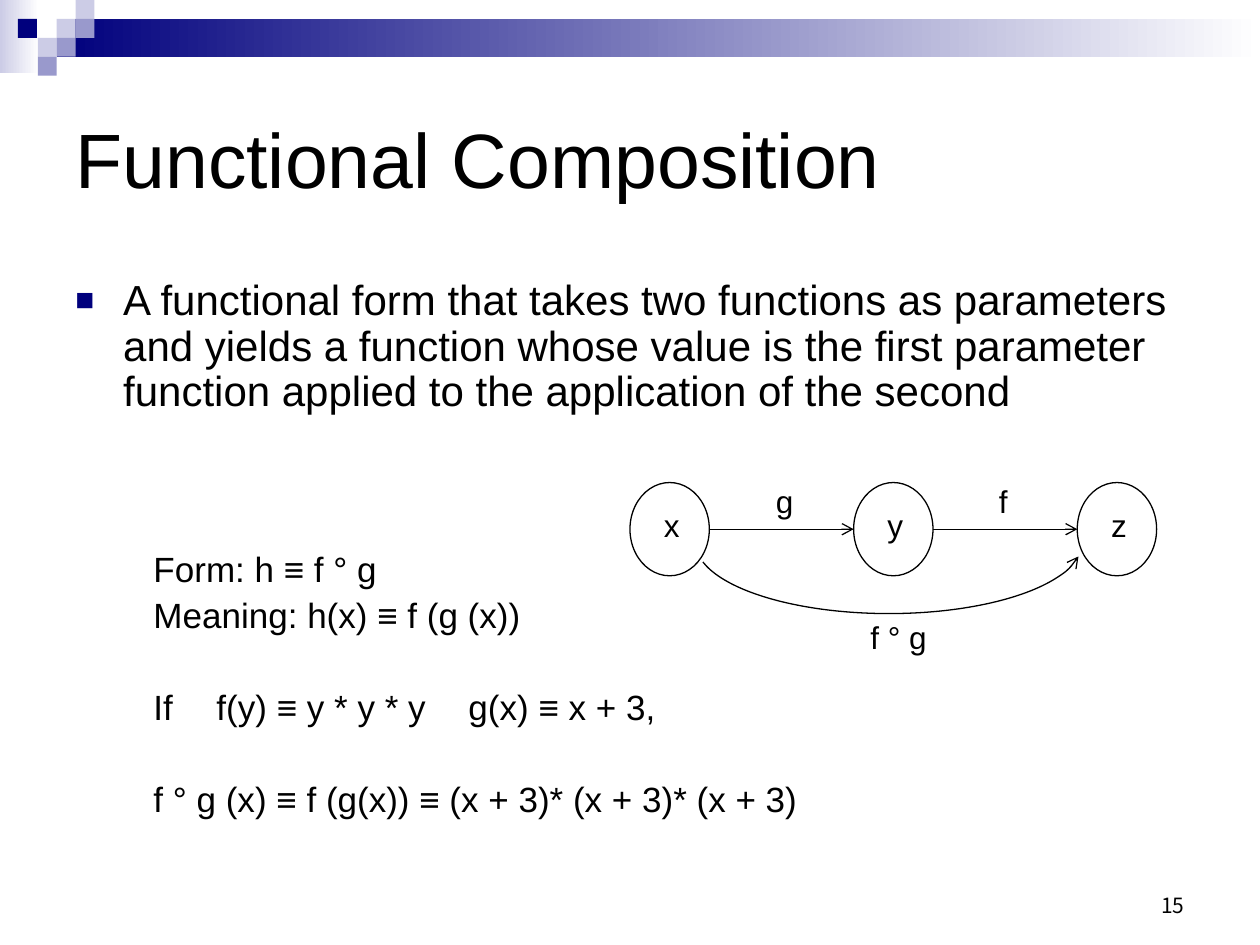
"""Build the Functional Composition slide."""
from lxml.etree import SubElement
from pptx import Presentation
from pptx.dml.color import RGBColor
from pptx.enum.shapes import MSO_CONNECTOR, MSO_SHAPE
from pptx.enum.text import MSO_ANCHOR, PP_ALIGN
from pptx.oxml.ns import qn
from pptx.util import Inches, Pt

TITLE = "Functional Composition"
POINT = ("A functional form that takes two functions as parameters and yields "
         "a function whose value is the first parameter function applied to "
         "the application of the second")
LINES = [
    ("Form: h ≡ f ° g", 78),
    ("Meaning: h(x) ≡ f (g (x))", 5),
    ("If\tf(y) ≡ y * y * y\tg(x) ≡ x + 3,", 30.7),
    ("f ° g (x) ≡ f (g(x)) ≡ (x + 3)* (x + 3)* (x + 3)", 30.7),
]
TABS = [1.24, 3.58]
NODES = ["x", "y", "z"]
LABELS = [("g", 6.06, 3.78, 0.34), ("f", 7.83, 3.78, 0.27),
          ("f ° g", 6.81, 4.86, 0.72)]
NAVY, MID, PALE, WHITE, BLACK = "00007D", "9999CC", "CCCCE6", "FFFFFF", "000000"
BARS = [((0, 0, 0.31, 0.58), PALE), ((0.45, 0.15, 9.55, 0.3), NAVY)]
CELL = 0.15
TILES = [(3, 1, PALE), (4, 0, PALE), (4, 1, MID), (2, 2, PALE),
         (0.95, 1, NAVY), (3, 2, MID), (2, 3, MID)]
LEFT, TOP, STEP, WIDE, HIGH = 5, 3.83, 1.775, 0.63, 0.74


def tint(code):
    """Turn a hex string into a colour."""
    return RGBColor.from_string(code)


def apply(item, **look):
    """Set each format value on an item."""
    for name, value in look.items():
        setattr(item, name, value)


def write(para, text, size, face="Arial"):
    """Add a run of text to a paragraph."""
    run = para.add_run()
    run.text = text
    apply(run.font, size=Pt(size), name=face)
    run.font.color.rgb = tint(BLACK)


def add_box(slide, at, wrap=True):
    """Add a text box and return its frame."""
    frame = slide.shapes.add_textbox(*map(Inches, at)).text_frame
    frame.word_wrap = wrap
    return frame


def add_form(slide, kind, at):
    """Add a preset shape without shadow."""
    shape = slide.shapes.add_shape(kind, *map(Inches, at))
    shape.shadow.inherit = False
    return shape


def ink(shape, arrow=False):
    """Draw a thin black line, with an arrowhead on demand."""
    shape.line.color.rgb = tint(BLACK)
    shape.line.width = Pt(0.75)
    if arrow:
        line = shape._element.spPr.find(qn("a:ln"))
        SubElement(line, qn("a:tailEnd"), type="arrow")


def add_band(slide):
    """Draw the gradient bars and the tiles at the top."""
    for at, code in BARS:
        bar = add_form(slide, MSO_SHAPE.RECTANGLE, at)
        bar.line.fill.background()
        bar.fill.gradient()
        bar.fill.gradient_angle = 0
        for stop, shade in zip(bar.fill.gradient_stops, (code, WHITE)):
            stop.color.rgb = tint(shade)
    for col, row, code in TILES:
        at = (col * CELL, row * CELL, CELL, CELL)
        tile = add_form(slide, MSO_SHAPE.RECTANGLE, at)
        tile.line.fill.background()
        tile.fill.solid()
        tile.fill.fore_color.rgb = tint(code)


def add_title(slide):
    """Place and fill the title."""
    title = slide.shapes.title
    apply(title, left=Inches(0.5), top=Inches(0.5), width=Inches(9),
          height=Inches(1.5))
    title.text_frame.vertical_anchor = MSO_ANCHOR.MIDDLE
    para = title.text_frame.paragraphs[0]
    para.alignment = PP_ALIGN.LEFT
    write(para, TITLE, 44)


def add_body(slide):
    """Write the bullet and the formulas below it."""
    frame = add_box(slide, (0.5, 2.17, 9, 4.82))
    para = frame.paragraphs[0]
    apply(para, line_spacing=0.9, space_before=Pt(2))
    write(para, POINT, 24)
    props = para._p.get_or_add_pPr()
    props.set("marL", str(Inches(0.38)))
    props.set("indent", str(-Inches(0.38)))
    SubElement(SubElement(props, qn("a:buClr")), qn("a:srgbClr"), val=NAVY)
    SubElement(props, qn("a:buSzPct"), val="75000")
    SubElement(props, qn("a:buFont"), typeface="Arial")
    SubElement(props, qn("a:buChar"), char="■")
    for text, gap in LINES:
        para = frame.add_paragraph()
        apply(para, line_spacing=0.9, space_before=Pt(gap))
        write(para, text, 20)
        props = para._p.get_or_add_pPr()
        props.set("marL", str(Inches(0.62)))
        props.set("indent", "0")
        if "\t" in text:
            stops = SubElement(props, qn("a:tabLst"))
            for tab in TABS:
                SubElement(stops, qn("a:tab"), pos=str(Inches(tab)), algn="l")


def add_graph(slide):
    """Draw the nodes, arrows and labels of the mapping."""
    for num, name in enumerate(NODES):
        left = LEFT + num * STEP
        node = add_form(slide, MSO_SHAPE.OVAL, (left, TOP, WIDE, HIGH))
        node.fill.background()
        ink(node)
        frame = add_box(slide, (left + 0.17, TOP + 0.14, 0.33, 0.4), False)
        write(frame.paragraphs[0], name, 18)
        if num:
            ends = (left - STEP + WIDE, TOP + HIGH / 2, left, TOP + HIGH / 2)
            link = slide.shapes.add_connector(MSO_CONNECTOR.STRAIGHT,
                                              *map(Inches, ends))
            ink(link, True)
            SubElement(link._element.spPr, qn("a:effectLst"))
    for text, left, top, width in LABELS:
        frame = add_box(slide, (left, top, width, 0.4), False)
        write(frame.paragraphs[0], text, 18)
    arc = add_form(slide, MSO_SHAPE.ARC, (5.52, 3.74, 3.07, 1.13))
    arc.adjustments[0], arc.adjustments[1] = 111.6, 213.46
    arc._element.spPr.find(qn("a:xfrm")).set("flipV", "1")
    arc.fill.background()
    ink(arc, True)


def main():
    """Build and save the slide."""
    deck = Presentation()
    apply(deck, slide_width=Inches(10), slide_height=Inches(7.5))
    slide = deck.slides.add_slide(deck.slide_layouts[5])
    add_band(slide)
    frame = add_box(slide, (7.17, 6.83, 2.33, 0.5))
    frame.vertical_anchor = MSO_ANCHOR.BOTTOM
    frame.paragraphs[0].alignment = PP_ALIGN.RIGHT
    write(frame.paragraphs[0], "15", 12, "Noto Sans CJK KR")
    add_title(slide)
    add_body(slide)
    add_graph(slide)
    deck.save("out.pptx")


if __name__ == "__main__":
    main()
